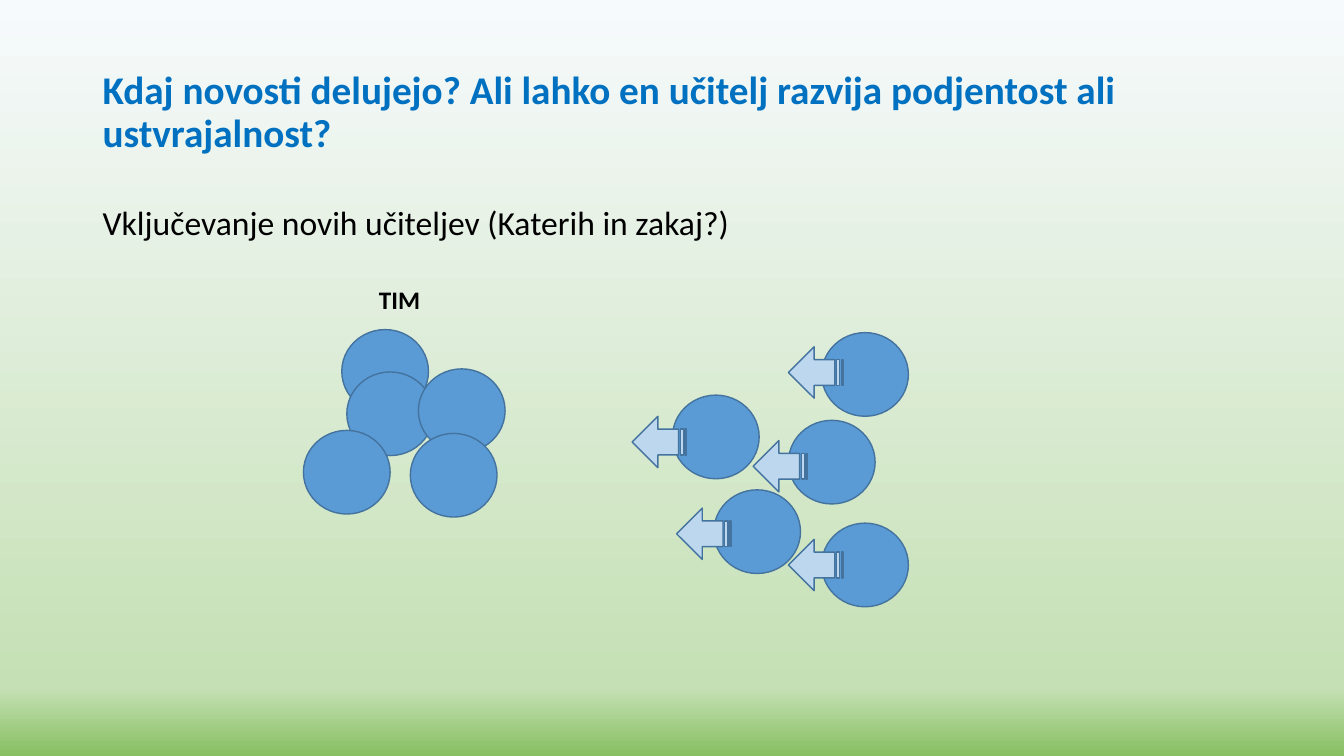
from typing import NamedTuple

from lxml import etree
from pptx import Presentation
from pptx.dml.color import RGBColor
from pptx.enum import shapes, text
from pptx.oxml import ns
from pptx.slide import Slide
from pptx.util import Inches, Pt

TITLE = RGBColor(0x00, 0x70, 0xC0)
BLACK = RGBColor(0x00, 0x00, 0x00)
BLUE = RGBColor(0x5B, 0x9B, 0xD5)
PALE = RGBColor(0xBD, 0xD7, 0xEE)
EDGE = RGBColor(0x43, 0x73, 0x9E)
SKY = RGBColor(0xF7, 0xFA, 0xFD)
MINT = RGBColor(0xC5, 0xE0, 0xB4)
GRASS = RGBColor(0x87, 0xBF, 0x61)
STOPS = ((0, SKY), (91, MINT), (100, GRASS))


class Spot(NamedTuple):
    left: float
    top: float


class Kind(NamedTuple):
    """Look shared by all marks of one sort."""
    form: shapes.MSO_SHAPE
    width: float
    height: float
    fill: RGBColor
    turn: float = 0


class Label(NamedTuple):
    words: str
    left: float
    top: float
    width: float
    height: float
    size: int
    color: RGBColor
    bold: bool = False
    anchor: text.MSO_ANCHOR = text.MSO_ANCHOR.TOP
    wrap: bool = True
    line: float = 0.9
    before: int = 0


PERSON = Kind(shapes.MSO_SHAPE.OVAL, 0.86, 0.83, BLUE)
ARROW = Kind(shapes.MSO_SHAPE.STRIPED_RIGHT_ARROW, 0.54, 0.51, PALE, 180)

TEAM = (Spot(3.39, 3.27), Spot(3.44, 3.69), Spot(4.15, 3.66),
        Spot(4.07, 4.3), Spot(3.01, 4.27))
JOINERS = (Spot(6.67, 3.92), Spot(7.82, 4.17), Spot(8.15, 3.3),
           Spot(8.15, 5.19), Spot(7.08, 4.86))
MOVES = (Spot(7.47, 4.37), Spot(7.82, 5.35), Spot(7.82, 3.44),
         Spot(6.71, 5.04), Spot(6.27, 4.13))

HEAD = Label("Kdaj novosti delujejo? Ali lahko en učitelj razvija podjentost "
             "ali ustvrajalnost?", 0.92, 0.4, 11.5, 1.45, 28, TITLE,
             bold=True, anchor=text.MSO_ANCHOR.MIDDLE)
BODY = Label("Vključevanje novih učiteljev (Katerih in zakaj?)",
             0.92, 2, 11.5, 4.76, 24, BLACK, before=10)
TEAM_TAG = Label("TIM", 3.66, 2.77, 0.71, 0.4, 18, BLACK,
                 bold=True, wrap=False, line=1)


def paint_back(slide: Slide) -> None:
    """Fill the background from top to bottom with STOPS."""
    slide.background.fill.gradient()
    grad = next(slide.element.iter(ns.qn("a:gradFill")))
    stops = grad.find(ns.qn("a:gsLst"))
    for old in list(stops):
        stops.remove(old)
    for place, color in STOPS:
        stop = etree.SubElement(stops, ns.qn("a:gs"), pos=str(place * 1000))
        etree.SubElement(stop, ns.qn("a:srgbClr"), val=str(color))
    grad.find(ns.qn("a:lin")).set("ang", str(90 * 60000))


def add_label(slide: Slide, label: Label) -> None:
    box = slide.shapes.add_textbox(Inches(label.left), Inches(label.top),
                                   Inches(label.width), Inches(label.height))
    frame = box.text_frame
    frame.word_wrap = label.wrap
    frame.vertical_anchor = label.anchor
    para = frame.paragraphs[0]
    para.line_spacing = label.line
    para.space_before = Pt(label.before)
    run = para.add_run()
    run.text = label.words
    run.font.name = "Calibri"
    run.font.size = Pt(label.size)
    run.font.bold = label.bold
    run.font.color.rgb = label.color


def add_marks(slide: Slide, kind: Kind, spots: tuple[Spot, ...]) -> None:
    for spot in spots:
        mark = slide.shapes.add_shape(
            kind.form, Inches(spot.left), Inches(spot.top),
            Inches(kind.width), Inches(kind.height))
        mark.rotation = kind.turn
        mark.shadow.inherit = False
        mark.fill.solid()
        mark.fill.fore_color.rgb = kind.fill
        mark.line.color.rgb = EDGE
        mark.line.width = Pt(1)


def main() -> None:
    deck = Presentation()
    deck.slide_width, deck.slide_height = Inches(13.33), Inches(7.5)
    slide = deck.slides.add_slide(deck.slide_layouts[6])
    paint_back(slide)
    add_label(slide, HEAD)
    add_label(slide, BODY)
    add_marks(slide, PERSON, TEAM + JOINERS)
    add_label(slide, TEAM_TAG)
    add_marks(slide, ARROW, MOVES)
    deck.save("out.pptx")


if __name__ == "__main__":
    main()
